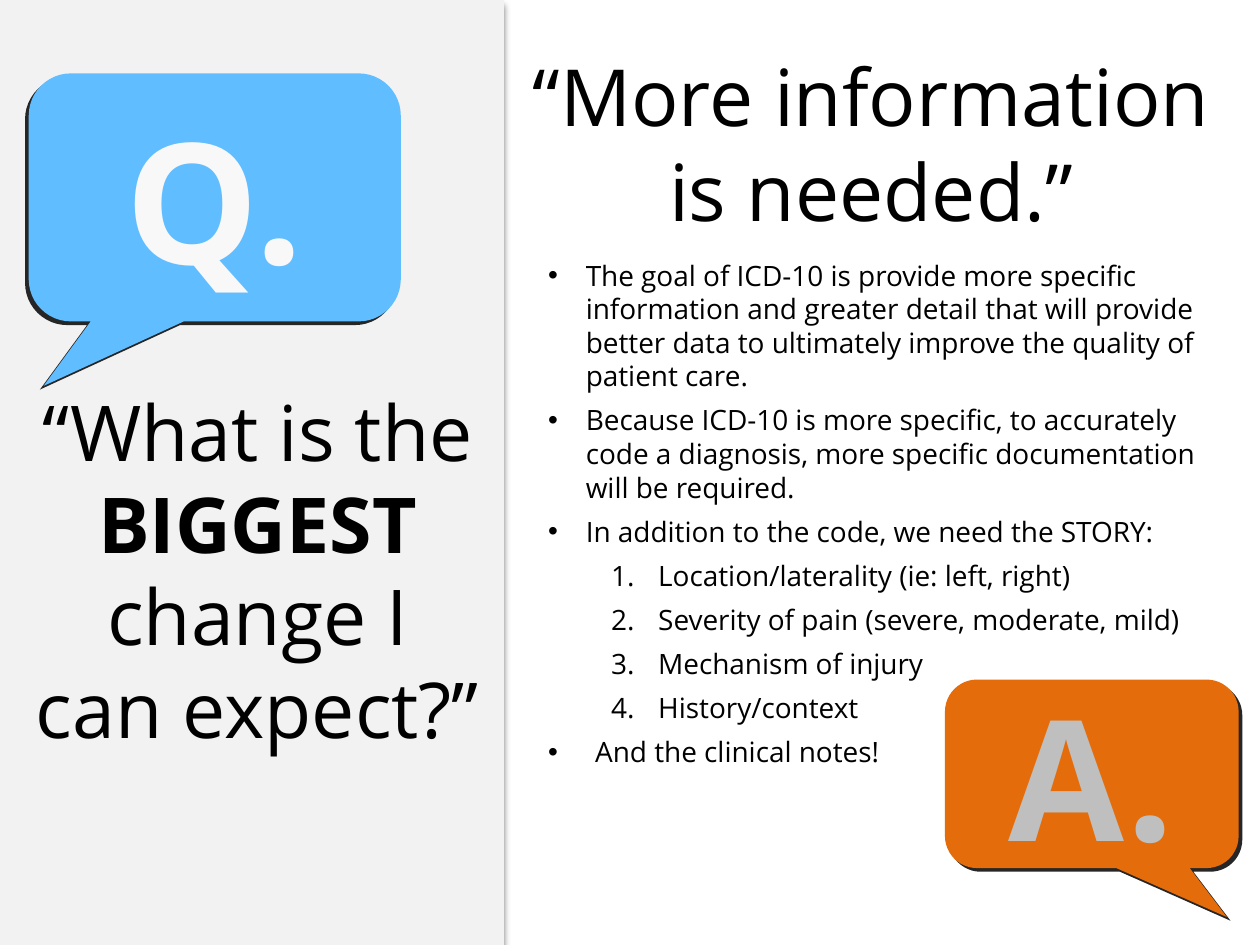
import pptx
import pptx.util
import pptx.dml.color
import pptx.enum.shapes
import pptx.enum.text
import pptx.oxml
import pptx.oxml.ns

Cm = pptx.util.Cm
Pt = pptx.util.Pt
SHAPES = pptx.enum.shapes.MSO_SHAPE
ALIGN = pptx.enum.text.PP_ALIGN
ANCHOR = pptx.enum.text.MSO_ANCHOR
qn = pptx.oxml.ns.qn

FONT = "Open Sans"
COLORS = {
    "panel": "F2F2F2",
    "panel_shadow": "808080",
    "question": "60BDFF",
    "question_letter": "F8F8F8",
    "answer": "E46C0A",
    "answer_letter": "BFBFBF",
    "edge": "262626",
    "text": "000000",
}
GOALS = [
    "The goal of ICD-10 is provide more specific information and greater detail "
    "that will provide better data to ultimately improve the quality of patient care.",
    "Because ICD-10 is more specific, to accurately code a diagnosis, "
    "more specific documentation will be required.",
    "In addition to the code, we need the STORY:",
]
STORY = [
    "Location/laterality (ie: left, right)",
    "Severity of pain (severe, moderate, mild)",
    "Mechanism of injury",
    "History/context",
]
CLOSING = "And the clinical notes!"


def rgb(name):
    return pptx.dml.color.RGBColor.from_string(COLORS[name])


def place(shape, box):
    shape.left, shape.top, shape.width, shape.height = (Cm(side) for side in box)


def add_run(paragraph, text, size, color="text", bold=False):
    run = paragraph.add_run()
    run.text = text
    run.font.name = FONT
    run.font.size = Pt(size)
    run.font.bold = bold
    run.font.color.rgb = rgb(color)
    return run


def add_shadow(shape, color, angle, blur):
    shape.shadow.inherit = False
    effects = shape._element.spPr.find(qn("a:effectLst"))
    shadow = pptx.oxml.parse_xml(
        f'<a:outerShdw {pptx.oxml.ns.nsdecls("a")} blurRad="{Pt(blur)}" dist="{Pt(3)}" '
        f'dir="{angle * 60000}" algn="ctr" rotWithShape="0">'
        f'<a:srgbClr val="{COLORS[color]}"/></a:outerShdw>'
    )
    effects.append(shadow)


def add_panel(slide, box):
    panel = slide.shapes.add_shape(SHAPES.RECTANGLE, *(Cm(side) for side in box))
    panel.fill.solid()
    panel.fill.fore_color.rgb = rgb("panel")
    panel.line.fill.background()
    add_shadow(panel, "panel_shadow", 90, 4)


def add_bubble(slide, box, letter, color, tail, shadow_angle):
    bubble = slide.shapes.add_shape(
        SHAPES.ROUNDED_RECTANGULAR_CALLOUT, *(Cm(side) for side in box)
    )
    for index, value in enumerate((tail, 0.76, 0.17)):
        bubble.adjustments[index] = value
    bubble.fill.solid()
    bubble.fill.fore_color.rgb = rgb(color)
    bubble.line.fill.background()
    add_shadow(bubble, "edge", shadow_angle, 0)
    frame = bubble.text_frame
    frame.vertical_anchor = ANCHOR.MIDDLE
    paragraph = frame.paragraphs[0]
    paragraph.alignment = ALIGN.CENTER
    run = add_run(paragraph, letter, 96, f"{color}_letter", True)
    run._r.get_or_add_rPr().set("spc", "150")


def add_text_area(slide, box):
    area = slide.shapes.add_textbox(*(Cm(side) for side in box))
    area.text_frame.word_wrap = True
    return area.text_frame


def add_question(slide, box):
    paragraph = add_text_area(slide, box).paragraphs[0]
    paragraph.alignment = ALIGN.CENTER
    add_run(paragraph, "“What is the ", 44)
    add_run(paragraph, "BIGGEST", 44, bold=True)
    add_run(paragraph, " change I can expect?”", 44)


def set_title(slide, box):
    title = slide.shapes.title
    place(title, box)
    frame = title.text_frame
    frame.word_wrap = True
    frame.auto_size = pptx.enum.text.MSO_AUTO_SIZE.NONE
    frame.vertical_anchor = ANCHOR.TOP
    paragraph = frame.paragraphs[0]
    paragraph.alignment = ALIGN.CENTER
    add_run(paragraph, "“More information is needed.”", 45)


def set_marker(paragraph, left, hanging, numbered):
    properties = paragraph._p.get_or_add_pPr()
    properties.set("marL", str(Cm(left)))
    properties.set("indent", str(-Cm(hanging)))
    marker = 'buAutoNum type="arabicPeriod"' if numbered else 'buChar char="•"'
    for tag in ('buFont typeface="Arial"' if not numbered else 'buFont typeface="+mj-lt"', marker):
        properties.append(pptx.oxml.parse_xml(f'<a:{tag} {pptx.oxml.ns.nsdecls("a")}/>'))


def add_answer(slide, box):
    frame = add_text_area(slide, box)
    items = [(goal, 0, 0.76, 0.76) for goal in GOALS]
    items += [(detail, 1, 2.22, 0.95) for detail in STORY]
    items.append((CLOSING, 0, 0.95, 0.95))
    for index, (text, level, left, hanging) in enumerate(items):
        paragraph = frame.add_paragraph() if index else frame.paragraphs[0]
        paragraph.level = level
        paragraph.space_after = Pt(6)
        set_marker(paragraph, left, hanging, level == 1)
        add_run(paragraph, text, 16)


def main():
    deck = pptx.Presentation()
    deck.slide_width, deck.slide_height = Cm(25.4), Cm(19.05)
    slide = deck.slides.add_slide(deck.slide_layouts[5])
    add_panel(slide, (0, 0, 10.16, 19.05))
    add_bubble(slide, (0.58, 1.48, 7.5, 5), "Q.", "question", -0.46, 135)
    add_bubble(slide, (19.05, 13.7, 5.92, 3.8), "A.", "answer", 0.46, 45)
    add_question(slide, (0.43, 7.62, 9.53, 7.77))
    set_title(slide, (10.36, 0.84, 14.4, 4.11))
    add_answer(slide, (10.8, 5.08, 13.77, 13.41))
    deck.save("out.pptx")


if __name__ == "__main__":
    main()
